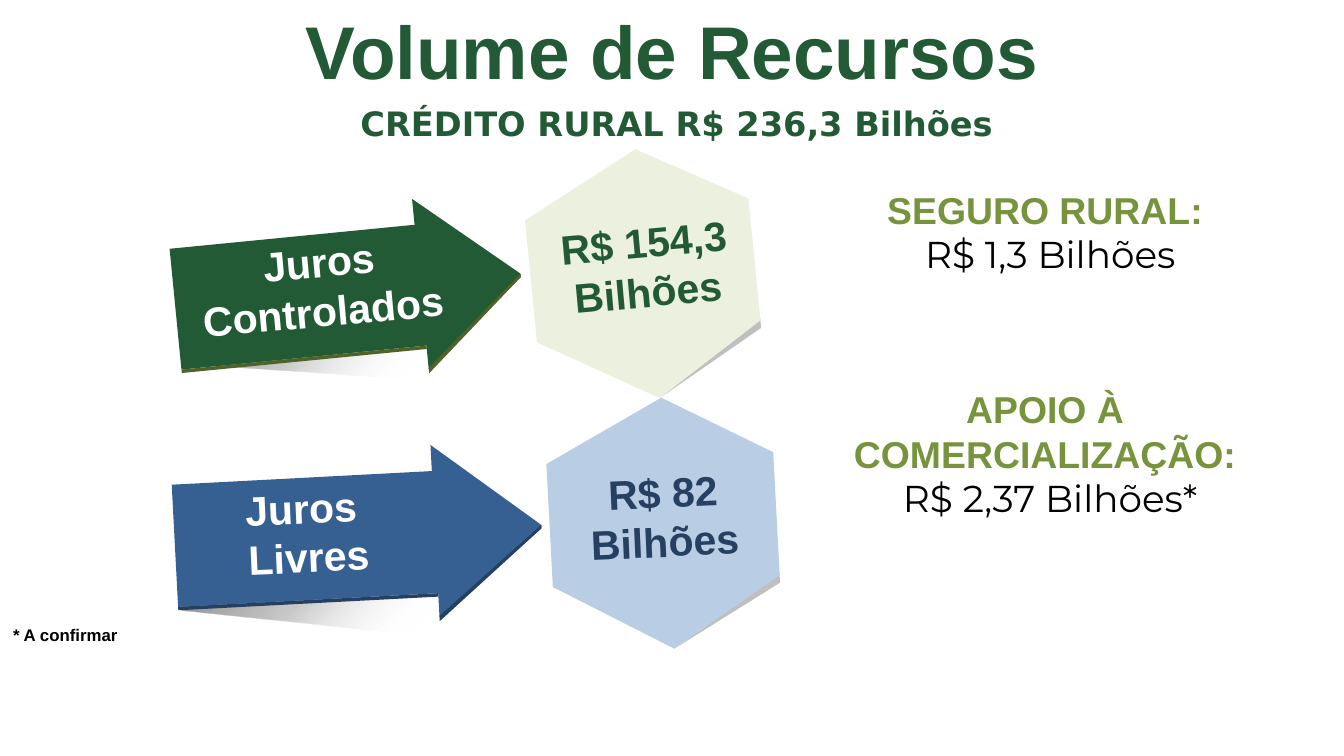
from math import cos, radians, sin

from lxml.etree import SubElement
from pptx import Presentation
from pptx.dml.color import RGBColor
from pptx.enum.shapes import MSO_SHAPE as Preset
from pptx.enum.text import MSO_ANCHOR as Anchor, MSO_AUTO_SIZE as AutoSize, PP_ALIGN as Align
from pptx.oxml.ns import qn
from pptx.util import Inches, Pt

WIDTH = Inches(10)
HEIGHT = WIDTH * 9 // 16
CELL = WIDTH / 100
COLORS = {
    "green": "225A35", "olive": "77933C", "moss": "4F6228", "cream": "EBF1DE",
    "blue": "376092", "navy": "254061", "sky": "B9CDE5",
    "gray": "BFBFBF", "black": "000000", "white": "FFFFFF",
}
SHADOW_STOPS = [(0, "626262", 100), (47, "8C8C8C", 45), (78, "FFFFFF", 0)]

ARROW = [(0, 0.15), (0.71, 0.15), (0.71, 0), (1, 0.49), (1, 0.51), (0.71, 0.99), (0.71, 0.85), (0, 0.85)]
ARROW_SHADOW = [(0.01, 0.4), (0.83, 0.4), (0.83, 1.14), (0.01, 0.87)]
HEAD_EDGE = [(1, 0.49), (1, 0.51), (0.71, 1.01), (0.71, 0.98)]
HEXAGON = [(0, 0.73), (0.52, 1), (1, 0.73), (1, 0.24), (0.52, 0), (0, 0.24)]
HEXAGON_EDGE = [(1, 0.72), (1, 0.76), (0.52, 1)]


def cells(box):
    """Turn a box in grid columns and rows into slide lengths."""
    return [round(value * CELL) for value in box]


def rgb(color):
    """Look up a palette color."""
    return RGBColor.from_string(COLORS[color])


def paint(shape, color):
    """Give a shape a flat fill without line or shadow."""
    shape.shadow.inherit = False
    shape.line.fill.background()
    shape.fill.solid()
    shape.fill.fore_color.rgb = rgb(color)


def fade(shape):
    """Replace the fill by a diagonal gradient that fades out."""
    shape.fill.gradient()
    gradient = shape.fill._xPr.find(qn("a:gradFill"))
    for child in list(gradient):
        gradient.remove(child)
    stops = SubElement(gradient, qn("a:gsLst"))
    for position, color, opacity in SHADOW_STOPS:
        stop = SubElement(stops, qn("a:gs"), pos=str(position * 1000))
        tint = SubElement(stop, qn("a:srgbClr"), val=color)
        SubElement(tint, qn("a:alpha"), val=str(opacity * 1000))
    SubElement(gradient, qn("a:lin"), ang=str(45 * 60000), scaled="0")


def swing(box, part, tilt):
    """Move a part of a box, given in shares, as the box tilts about its center."""
    left, top, width, height = cells(box)
    x, y, w, h = part
    dx, dy = (x + w / 2 - 0.5) * width, (y + h / 2 - 0.5) * height
    turn = radians(tilt)
    center_x = left + width / 2 + dx * cos(turn) - dy * sin(turn)
    center_y = top + height / 2 + dx * sin(turn) + dy * cos(turn)
    return [round(v) for v in (center_x - w * width / 2, center_y - h * height / 2, w * width, h * height)]


def outline(shapes, box, points, tilt, color):
    """Draw a tilted polygon whose points are shares of the box."""
    xs, ys = zip(*points)
    part = min(xs), min(ys), max(xs) - min(xs), max(ys) - min(ys)
    left, top, _, _ = swing(box, part, tilt)
    _, _, width, height = cells(box)
    corners = [(round(left + (x - part[0]) * width), round(top + (y - part[1]) * height)) for x, y in points]
    builder = shapes.build_freeform(*corners[0])
    builder.add_line_segments(corners[1:], close=True)
    polygon = builder.convert_to_shape()
    polygon.rotation = tilt
    paint(polygon, color)
    return polygon


def write(frame, text, size=20, color="black", font="Arial", bold=True, align=Align.CENTER, spacing=None):
    """Add the lines of a text as formatted paragraphs."""
    frame.word_wrap = True
    frame.auto_size = AutoSize.NONE
    frame.vertical_anchor = Anchor.TOP
    for line in text.split("\n"):
        paragraph = frame.add_paragraph() if frame.text else frame.paragraphs[0]
        paragraph.alignment = align
        if spacing:
            paragraph.line_spacing = Pt(spacing)
        run = paragraph.add_run()
        run.text = line
        run.font.size, run.font.bold, run.font.name = Pt(size), bold, font
        run.font.color.rgb = rgb(color)


def label(shapes, box, text, tilt=0, **style):
    """Place a text box and return its frame."""
    holder = shapes.add_textbox(*cells(box))
    holder.rotation = tilt
    write(holder.text_frame, text, **style)
    return holder.text_frame


def header(slide):
    """Place the title and the total below it."""
    title = slide.shapes.title
    title.left, title.top, title.width, title.height = cells((0, -0.14, 100, 7.8))
    write(title.text_frame, "Volume de Recursos", size=40, color="green")
    total = label(slide.shapes, (-4.3, 5.3, 104.3, 5.6), "CRÉDITO RURAL R$ 236,3 Bilhões",
                  size=18, color="green", font="DejaVu Sans", spacing=35)
    total.margin_left = Inches(0.6)


def amount(slide, box, text_box, text, tilt, fill, ink):
    """Draw a tilted hexagon that holds an amount."""
    shapes = slide.shapes.add_group_shape().shapes
    outline(shapes, box, HEXAGON_EDGE, tilt, "gray")
    outline(shapes, box, HEXAGON, tilt, fill)
    label(shapes, text_box, text, tilt + 0.5, size=22, color=ink)


def arrow(slide, box, text_box, text, tilt, fill, edge, lift=0):
    """Draw a tilted arrow with a cast shadow, raised by lift, and a dark lower edge."""
    shapes = slide.shapes.add_group_shape().shapes
    fade(outline(shapes, box, [(x, y - lift) for x, y in ARROW_SHADOW], tilt, "gray"))
    outline(shapes, box, ARROW, tilt, fill)
    rim = shapes.add_shape(Preset.RECTANGLE, *swing(box, (0, 0.85, 0.71, 0.02), tilt))
    rim.rotation = tilt
    paint(rim, edge)
    outline(shapes, box, HEAD_EDGE, tilt, edge)
    label(shapes, text_box, text, tilt + 0.5, size=22, color="white")


def program(slide, box, heading, value):
    """Place a program heading with its value below."""
    frame = label(slide.shapes, box, heading, color="olive")
    write(frame, value, font="Montserrat", bold=False)


def main():
    """Build and save the slide."""
    deck = Presentation()
    deck.slide_width, deck.slide_height = WIDTH, HEIGHT
    slide = deck.slides.add_slide(deck.slide_layouts[5])
    header(slide)
    label(slide.shapes, (0, 46, 99.6, 2.5), "* A confirmar", size=9, align=Align.LEFT)
    program(slide, (59.85, 13.4, 36.6, 7.7), "SEGURO RURAL: ", "R$ 1,3 Bilhões")
    program(slide, (59.85, 28.23, 36.6, 11.1), "APOIO À \nCOMERCIALIZAÇÃO: ", "R$ 2,37 Bilhões*")
    amount(slide, (40.9, 29.6, 16.9, 18.7), (41.25, 34.25, 16.3, 8.4), "R$ 82\nBilhões", -3, "sky", "navy")
    arrow(slide, (13, 33.4, 27.3, 13), (14.1, 35.4, 17.6, 8.4), "Juros \nLivres", -3, "blue", "navy")
    amount(slide, (39.5, 11.1, 16.7, 18.6), (39.4, 15.65, 17.3, 8.4), "R$ 154,3\nBilhões", -5.6, "cream", "green")
    arrow(slide, (13, 15.3, 25.8, 12.9), (13.73, 17.1, 20.3, 8.4), "Juros Controlados", -5.6, "green", "moss", 0.05)
    deck.save("out.pptx")


if __name__ == "__main__":
    main()
